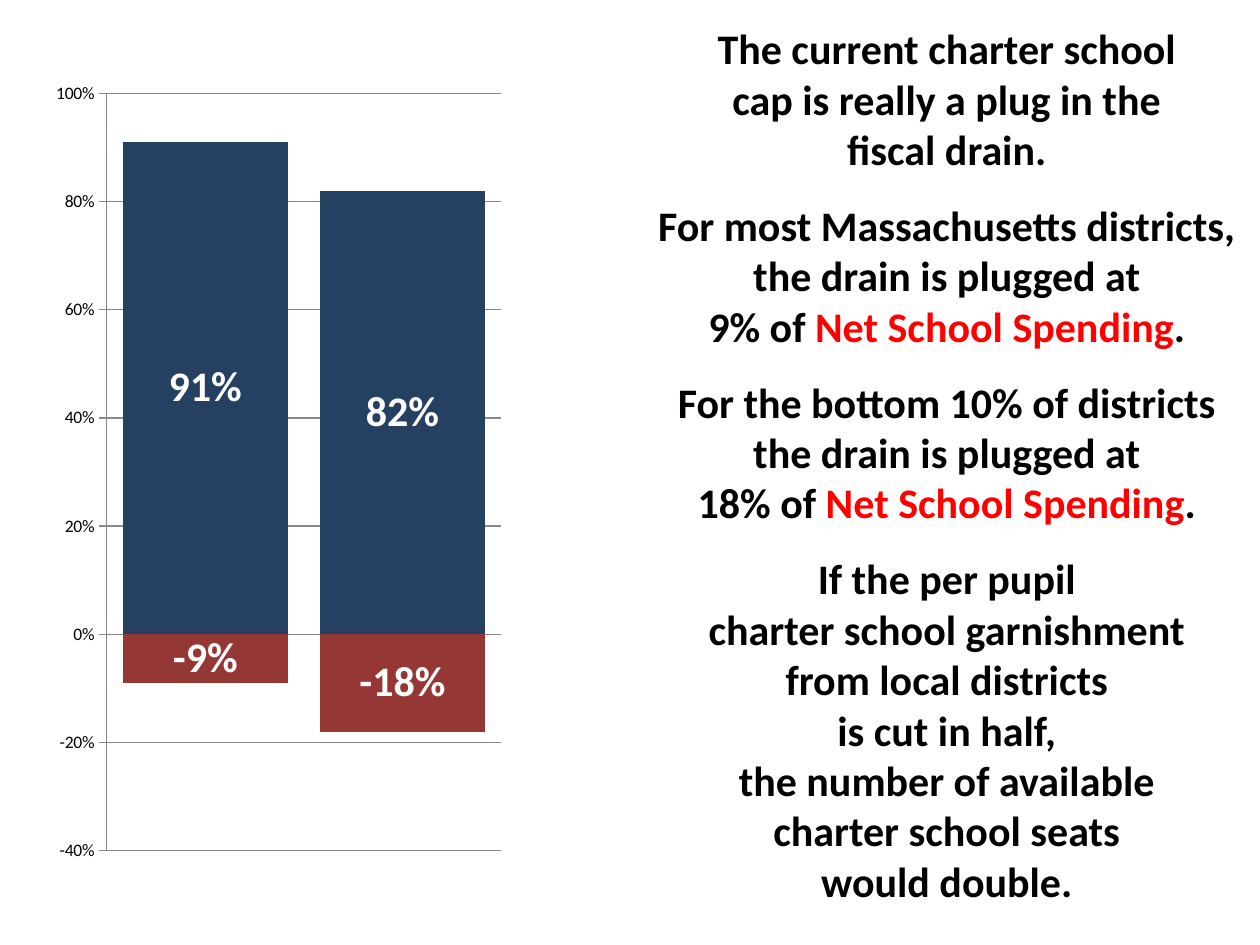
import pptx
import pptx.util
import pptx.oxml
import pptx.chart.data
import pptx.dml.color
import pptx.enum.chart
import pptx.enum.text

Pt = pptx.util.Pt
TERM = "Net School Spending"
BLOCKS = [
    ["The current charter school", "cap is really a plug in the", "fiscal drain."],
    ["For most Massachusetts districts,", "the drain is plugged at", f"9% of {TERM}."],
    ["For the bottom 10% of districts", "the drain is plugged at", f"18% of {TERM}."],
    ["If the per pupil", "charter school garnishment", "from local districts",
     "is cut in half,", "the number of available", "charter school seats", "would double."],
]
BARS = [("Series 1", (0.91, 0.82), "254061"), ("Series 2", (-0.09, -0.18), "953735")]
PLOT = {"x": 0.057, "y": 0.028, "w": 0.334, "h": 0.943}


def color(code):
    return pptx.dml.color.RGBColor.from_string(code)


def apply(item, form):
    for name, value in form.items():
        setattr(item, name, value)


def style(font, size, code, bold=False):
    apply(font, {"name": "Calibri", "size": Pt(size), "bold": bold})
    font.color.rgb = color(code)


def lay_plot(chart):
    area = chart._chartSpace.chart.plotArea
    for old in area.findall(pptx.oxml.ns.qn("c:layout")):
        area.remove(old)
    parts = "".join(f'<c:{key}Mode val="edge"/>' for key in "xy")
    parts += "".join(f'<c:{key} val="{value}"/>' for key, value in PLOT.items())
    area.insert(0, pptx.oxml.parse_xml(
        f'<c:layout {pptx.oxml.ns.nsdecls("c")}><c:manualLayout>'
        f'<c:layoutTarget val="inner"/>{parts}</c:manualLayout></c:layout>'))


def add_bars(slide, box):
    kind = pptx.enum.chart
    data = pptx.chart.data.CategoryChartData(number_format="0%")
    data.categories = ["1", "2"]
    for name, values, code in BARS:
        data.add_series(name, values)
    chart = slide.shapes.add_chart(
        kind.XL_CHART_TYPE.COLUMN_STACKED, *map(Pt, box), data).chart
    apply(chart, {"has_legend": False, "has_title": False})
    style(chart.font, 10, "000000")
    chart.category_axis.visible = False
    axis = chart.value_axis
    apply(axis, {"minimum_scale": -0.4, "maximum_scale": 1, "major_unit": 0.2,
                 "has_major_gridlines": True,
                 "major_tick_mark": kind.XL_TICK_MARK.OUTSIDE})
    apply(axis.tick_labels, {"number_format": "0%", "number_format_is_linked": False})
    for line in (axis.format.line, axis.major_gridlines.format.line):
        line.width = Pt(0.75)
        line.color.rgb = color("878787")
    plot = chart.plots[0]
    apply(plot, {"gap_width": 20, "overlap": 100, "vary_by_categories": False})
    for series, (name, values, code) in zip(plot.series, BARS):
        series.invert_if_negative = False
        series.format.fill.solid()
        series.format.fill.fore_color.rgb = color(code)
        labels = series.data_labels
        apply(labels, {"show_value": True, "number_format": "0%",
                       "number_format_is_linked": False,
                       "position": kind.XL_LABEL_POSITION.CENTER})
        style(labels.font, 24, "FFFFFF", True)
    lay_plot(chart)


def add_run(para, text, code):
    run = para.add_run()
    run.text = text
    style(run.font, 24, code, True)


def add_story(slide, box):
    frame = slide.shapes.add_textbox(*map(Pt, box)).text_frame
    frame.word_wrap = True
    for index, block in enumerate(BLOCKS):
        para = frame.add_paragraph() if index else frame.paragraphs[0]
        apply(para, {"alignment": pptx.enum.text.PP_ALIGN.CENTER,
                     "space_before": Pt(14.6 if index else 0)})
        for row, line in enumerate(block):
            if row:
                para.add_line_break()
            head, term, tail = line.partition(TERM)
            for text, code in ((head, "000000"), (term, "FF0000"), (tail, "000000")):
                if text:
                    add_run(para, text, code)


def main():
    deck = pptx.Presentation()
    apply(deck, {"slide_width": Pt(720), "slide_height": Pt(540)})
    slide = deck.slides.add_slide(deck.slide_layouts[6])
    add_bars(slide, (22.5, 40.5, 675, 459))
    add_story(slide, (362, 9.4, 358, 521))
    deck.save("out.pptx")


if __name__ == "__main__":
    main()
